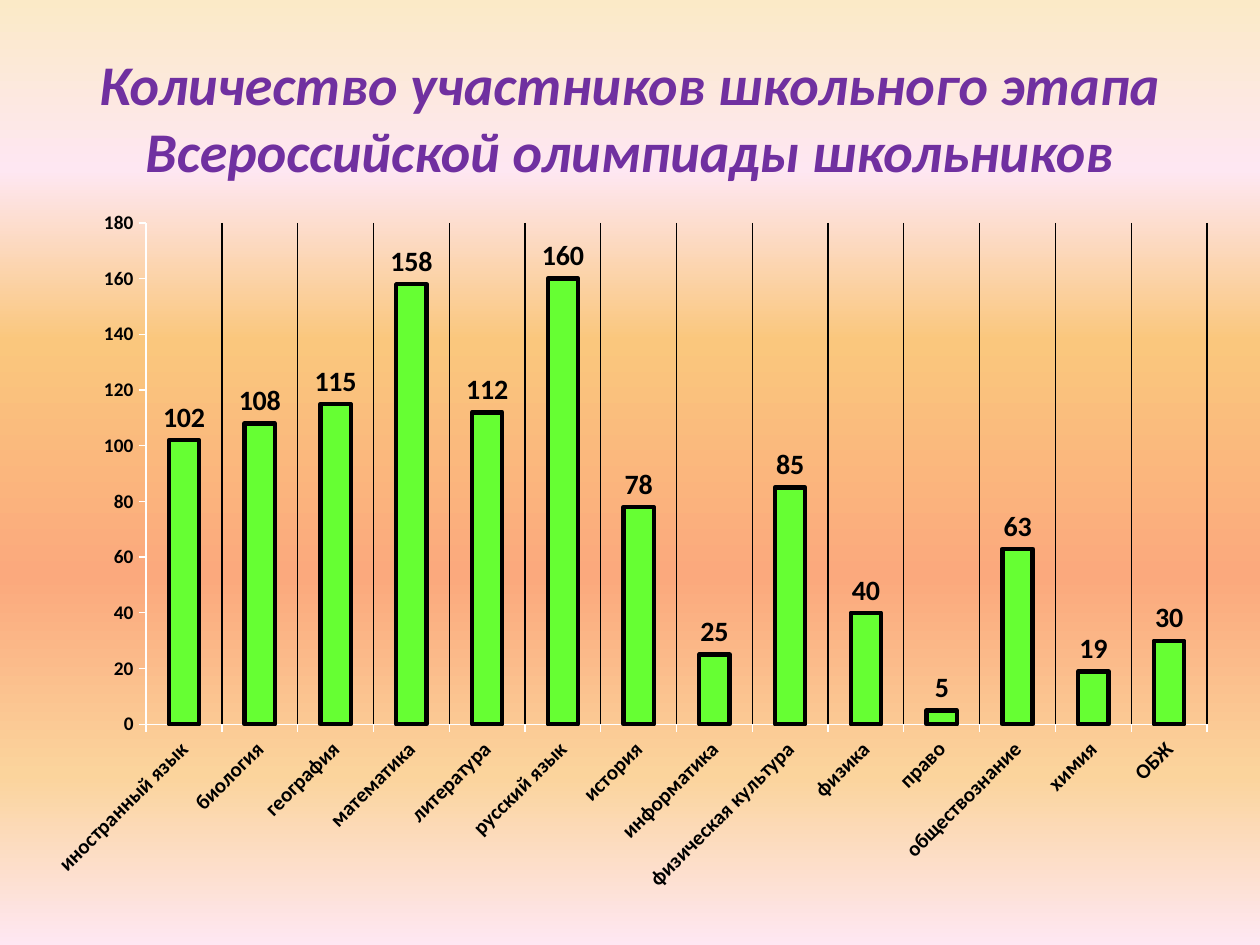
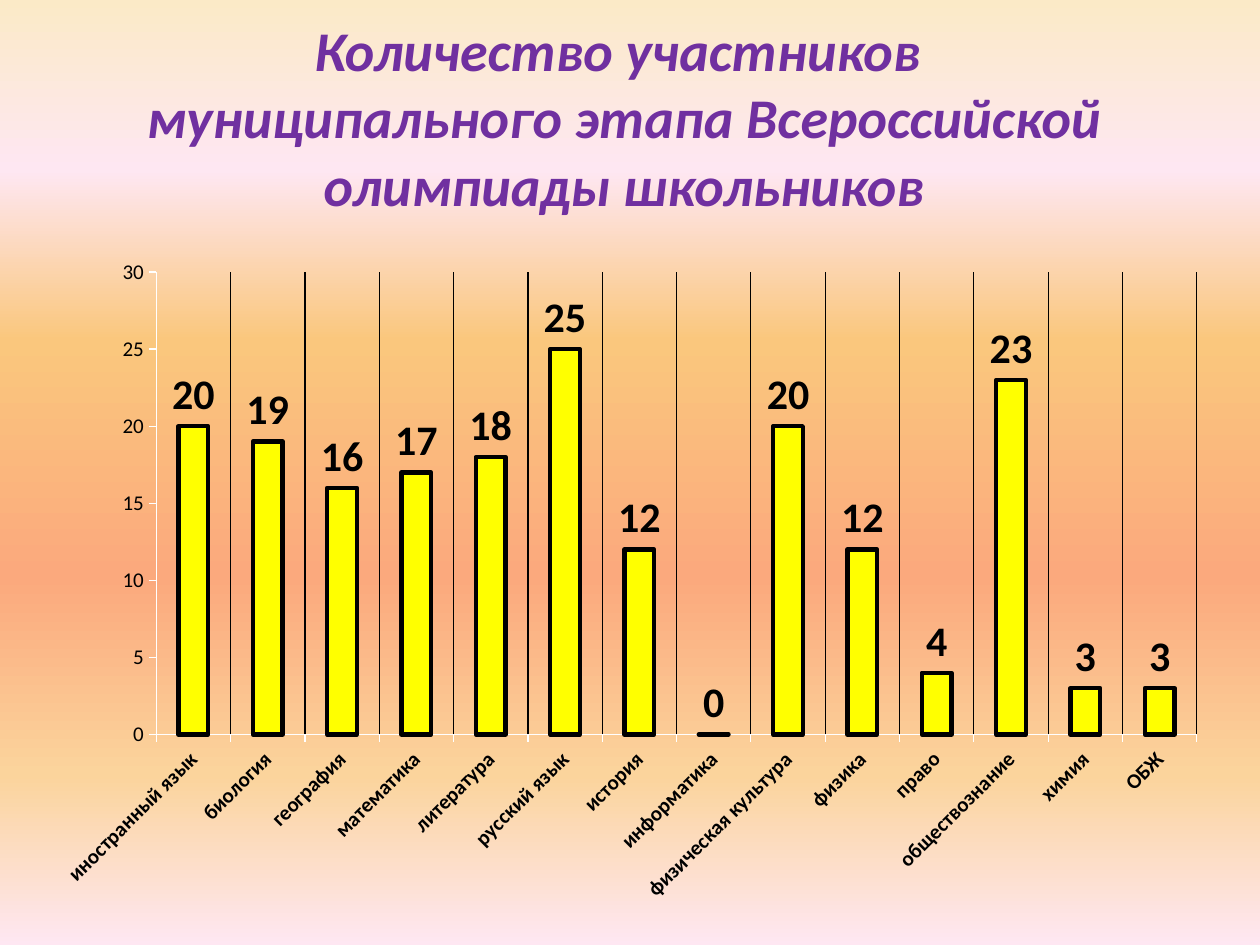
from lxml import etree
from pptx import Presentation
from pptx.chart.data import CategoryChartData
from pptx.dml.color import RGBColor
from pptx.enum.chart import XL_CHART_TYPE, XL_LABEL_POSITION, XL_TICK_MARK
from pptx.enum.text import MSO_ANCHOR, MSO_AUTO_SIZE, PP_ALIGN
from pptx.oxml.ns import qn
from pptx.util import Inches, Pt

COLUMNS = XL_CHART_TYPE.COLUMN_CLUSTERED
ABOVE_BAR = XL_LABEL_POSITION.OUTSIDE_END
TICK_OUT, TICK_NONE = XL_TICK_MARK.OUTSIDE, XL_TICK_MARK.NONE
MIDDLE, CENTER = MSO_ANCHOR.MIDDLE, PP_ALIGN.CENTER
NO_FIT = MSO_AUTO_SIZE.NONE

# Shared look
FONT = "Calibri"
PURPLE = RGBColor(0x70, 0x30, 0xA0)
BLACK = RGBColor(0x00, 0x00, 0x00)
WHITE = RGBColor(0xFF, 0xFF, 0xFF)
GREEN = RGBColor(0x66, 0xFF, 0x33)
YELLOW = RGBColor(0xFF, 0xFF, 0x00)
CREAM = RGBColor(0xFB, 0xEA, 0xC7)
PINK = RGBColor(0xFE, 0xE7, 0xF2)
AMBER = RGBColor(0xFA, 0xC7, 0x7D)
SALMON = RGBColor(0xFB, 0xA9, 0x7D)
SAND = RGBColor(0xFB, 0xD4, 0x9C)
SUNSET = [(0, CREAM), (18, PINK), (36, AMBER), (61, SALMON), (82, SAND), (100, PINK)]

TITLE_FONT = {"name": FONT, "size": Pt(32), "bold": True, "italic": True}
TITLE_ONLY = 5

SUBJECTS = [
    "иностранный язык", "биология", "география", "математика", "литература",
    "русский язык", "история", "информатика", "физическая культура", "физика",
    "право", "обществознание", "химия", "ОБЖ",
]

# Boxes are left, top, width, height in inches
STAGES = [
    {
        "title": "Количество участников школьного этапа Всероссийской олимпиады школьников",
        "title_box": (0.5, 0.3, 9, 1.25),
        "chart_box": (0.23, 1.56, 9.53, 5.63),
        "plot_box": (1.16, 1.77, 8.42, 3.98),
        "counts": [102, 108, 115, 158, 112, 160, 78, 25, 85, 40, 5, 63, 19, 30],
        "color": GREEN,
        "scale": (180, 20),
        "scale_font": {"size": Pt(11), "bold": True},
        "label_size": Pt(16),
    },
    {
        "title": "Количество участников \vмуниципального этапа Всероссийской олимпиады школьников",
        "title_box": (0.23, 0.3, 9.45, 1.25),
        "chart_box": (0.31, 1.95, 9.38, 5.31),
        "plot_box": (1.24, 2.16, 8.26, 3.67),
        "counts": [20, 19, 16, 17, 18, 25, 12, 0, 20, 12, 4, 23, 3, 3],
        "color": YELLOW,
        "scale": (30, 5),
        "scale_font": {"size": Pt(12), "bold": False},
        "label_size": Pt(24),
    },
]


def set_values(target, values):
    for name, value in values.items():
        setattr(target, name, value)


def set_font(font, color, values):
    set_values(font, values)
    font.color.rgb = color


def set_line(line, color, width):
    line.color.rgb = color
    line.width = Pt(width)


def paint_background(master):
    """Give every slide the vertical sunset gradient."""
    fill = master.background.fill
    fill.gradient()
    fill.gradient_angle = 270
    stops = master.element.find(".//" + qn("a:gsLst"))
    for stop in list(stops):
        stops.remove(stop)
    for percent, color in SUNSET:
        stop = etree.SubElement(stops, qn("a:gs"), pos=str(percent * 1000))
        etree.SubElement(stop, qn("a:srgbClr"), val=str(color))


def place_title(page, text, box):
    title = page.shapes.title
    edges = (Inches(value) for value in box)
    set_values(title, dict(zip(("left", "top", "width", "height"), edges)))
    frame = title.text_frame
    frame.text = text
    set_values(frame, {"vertical_anchor": MIDDLE, "word_wrap": True, "auto_size": NO_FIT})
    para = frame.paragraphs[0]
    para.alignment = CENTER
    for span in para.runs:
        set_font(span.font, PURPLE, TITLE_FONT)


def fix_plot_area(chart, chart_box, plot_box):
    """Pin the inner plot area, as fractions of the chart."""
    left, top, width, height = chart_box
    x, y, plot_width, plot_height = plot_box
    plot_area = chart.element.find(".//" + qn("c:plotArea"))
    layout = plot_area.find(qn("c:layout"))
    if layout is None:
        layout = etree.Element(qn("c:layout"))
        plot_area.insert(0, layout)
    manual = etree.SubElement(layout, qn("c:manualLayout"))
    settings = {
        "layoutTarget": "inner", "xMode": "edge", "yMode": "edge",
        "x": (x - left) / width, "y": (y - top) / height,
        "w": plot_width / width, "h": plot_height / height,
    }
    for name, value in settings.items():
        etree.SubElement(manual, qn("c:" + name), val=str(value))


def style_axis(axis, font_values):
    set_values(axis, {"major_tick_mark": TICK_OUT, "minor_tick_mark": TICK_NONE})
    set_line(axis.format.line, WHITE, 0.75)
    set_font(axis.tick_labels.font, BLACK, {"name": FONT, **font_values})


def style_axes(chart, stage):
    # Subjects: slanted names, black dividers
    subjects = chart.category_axis
    style_axis(subjects, {"size": Pt(12), "bold": True})
    subjects.has_major_gridlines = True
    set_line(subjects.major_gridlines.format.line, BLACK, 0.75)
    body = subjects.tick_labels.font and chart.element.find(
        ".//" + qn("c:catAx") + "/" + qn("c:txPr") + "/" + qn("a:bodyPr"))
    body.set("rot", str(-45 * 60000))
    body.set("vert", "horz")

    # Participants
    counts = chart.value_axis
    style_axis(counts, stage["scale_font"])
    top, step = stage["scale"]
    set_values(counts, {"has_major_gridlines": False, "minimum_scale": 0,
                        "maximum_scale": top, "major_unit": step})


def add_column_chart(page, stage):
    data = CategoryChartData()
    data.categories = SUBJECTS
    data.add_series("Series 1", stage["counts"])
    box = (Inches(value) for value in stage["chart_box"])
    chart = page.shapes.add_chart(COLUMNS, *box, data).chart
    set_values(chart, {"has_legend": False, "has_title": False})
    set_font(chart.font, WHITE, {"name": FONT, "size": Pt(10)})
    fix_plot_area(chart, stage["chart_box"], stage["plot_box"])
    style_axes(chart, stage)

    # Bars and their values
    plot = chart.plots[0]
    set_values(plot, {"gap_width": 150, "vary_by_categories": False})
    bars = plot.series[0]
    bars.format.fill.solid()
    bars.format.fill.fore_color.rgb = stage["color"]
    set_line(bars.format.line, BLACK, 2.5)
    labels = bars.data_labels
    set_values(labels, {"show_value": True, "position": ABOVE_BAR})
    set_font(labels.font, BLACK, {"name": FONT, "size": stage["label_size"], "bold": True})


def main():
    deck = Presentation()
    set_values(deck, {"slide_width": Inches(10), "slide_height": Inches(7.5)})
    paint_background(deck.slide_master)
    for stage in STAGES:
        page = deck.slides.add_slide(deck.slide_layouts[TITLE_ONLY])
        place_title(page, stage["title"], stage["title_box"])
        add_column_chart(page, stage)
    deck.save("out.pptx")


if __name__ == "__main__":
    main()
